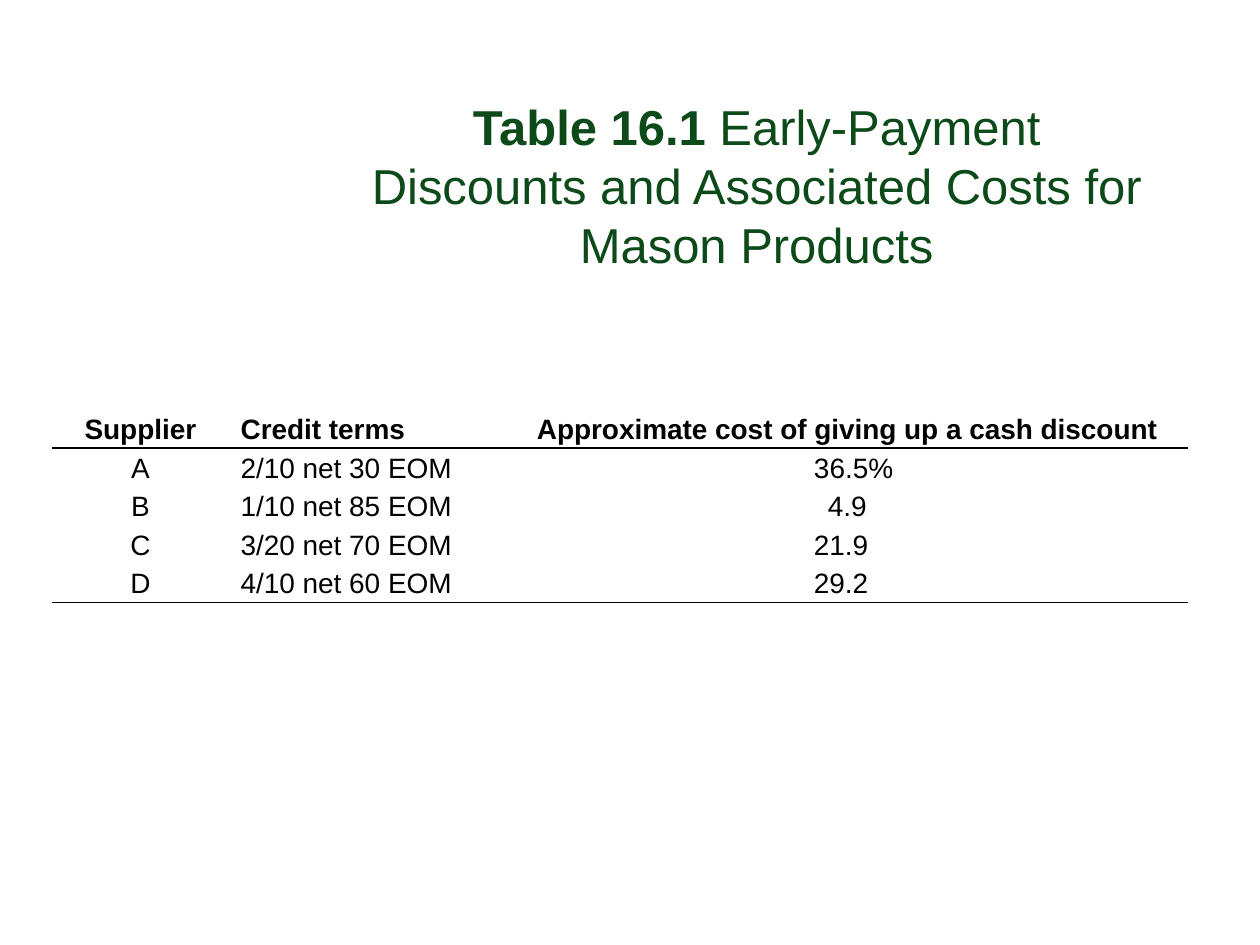
from lxml.etree import SubElement
from pptx import Presentation
from pptx.dml.color import RGBColor
from pptx.enum.text import MSO_ANCHOR, PP_ALIGN
from pptx.oxml.ns import qn
from pptx.util import Inches, Pt

TITLE_GREEN, BLACK = "0D4A19", "000000"
COLUMN_WIDTHS = [1.39, 2.22, 5.39]
COLUMN_ALIGNMENTS = [PP_ALIGN.CENTER, PP_ALIGN.LEFT, PP_ALIGN.CENTER]
ROW_HEIGHT = 0.28
# The left inset of the cost column lines up the decimal points.
COST_INSETS = [0.1, 0.2, 0.1, 0, 0]
SUPPLIER_TERMS = [
    ["Supplier", "Credit terms", "Approximate cost of giving up a cash discount"],
    ["A", "2/10 net 30 EOM", "36.5%"],
    ["B", "1/10 net 85 EOM", "4.9"],
    ["C", "3/20 net 70 EOM", "21.9"],
    ["D", "4/10 net 60 EOM", "29.2"],
]


def rgb(value):
    return RGBColor.from_string(value)


def set_all(target, values):
    for name, value in values.items():
        setattr(target, name, value)


class SlideBuilder:
    font_name = "Arial"

    def __init__(self, slide):
        self.slide = slide

    def add_run(self, paragraph, text, size, color, bold=False):
        run = paragraph.add_run()
        run.text = text
        set_all(run.font, {"name": self.font_name, "size": Pt(size), "bold": bold})
        run.font.color.rgb = rgb(color)

    def title(self, left, top, width, height, label, wording):
        box = self.slide.shapes.add_textbox(*map(Inches, (left, top, width, height)))
        frame = box.text_frame
        set_all(frame, {
            "word_wrap": True, "vertical_anchor": MSO_ANCHOR.BOTTOM,
            "margin_left": 0, "margin_top": 0, "margin_right": 0, "margin_bottom": 0,
        })
        paragraph = frame.paragraphs[0]
        paragraph.alignment = PP_ALIGN.CENTER
        self.add_run(paragraph, label, 28, TITLE_GREEN, bold=True)
        self.add_run(paragraph, wording, 28, TITLE_GREEN)

    def rule(self, cell, side):
        """Draw a black rule on one side of a cell, "T" or "B"."""
        properties = cell._tc.get_or_add_tcPr()
        line = SubElement(properties, qn(f"a:ln{side}"), w=str(Pt(1)))
        fill = SubElement(line, qn("a:solidFill"))
        SubElement(fill, qn("a:srgbClr"), val=BLACK)

    def cell(self, cell, text, alignment, left_inset, bold):
        set_all(cell, {
            "margin_left": Inches(left_inset), "margin_right": Inches(0.1),
            "margin_top": 0, "margin_bottom": 0,
        })
        paragraph = cell.text_frame.paragraphs[0]
        set_all(paragraph, {"alignment": alignment, "line_spacing": 1.15})
        self.add_run(paragraph, text, 16, BLACK, bold)

    def table(self, left, top, rows):
        frame = self.slide.shapes.add_table(
            len(rows), len(COLUMN_WIDTHS), Inches(left), Inches(top),
            Inches(sum(COLUMN_WIDTHS)), Inches(ROW_HEIGHT * len(rows)))
        table = frame.table
        set_all(table, {"first_row": False, "horz_banding": False})
        for column, width in zip(table.columns, COLUMN_WIDTHS):
            column.width = Inches(width)
        for r, texts in enumerate(rows):
            table.rows[r].height = Inches(ROW_HEIGHT)
            for c, text in enumerate(texts):
                cell = table.cell(r, c)
                inset = COST_INSETS[r] if c == 2 else 0.1
                self.cell(cell, text, COLUMN_ALIGNMENTS[c], inset, bold=r == 0)
                if r == 1:
                    self.rule(cell, "T")
                if r in (0, len(rows) - 1):
                    self.rule(cell, "B")
                cell.fill.background()


def main():
    presentation = Presentation()
    set_all(presentation, {"slide_width": Inches(10), "slide_height": Inches(7.5)})
    builder = SlideBuilder(presentation.slides.add_slide(presentation.slide_layouts[6]))
    builder.title(2.92, 0.97, 6.17, 1.2, "Table 16.1",
                  " Early-Payment Discounts and Associated Costs for Mason Products")
    builder.table(0.42, 3.25, SUPPLIER_TERMS)
    presentation.save("out.pptx")


if __name__ == "__main__":
    main()
